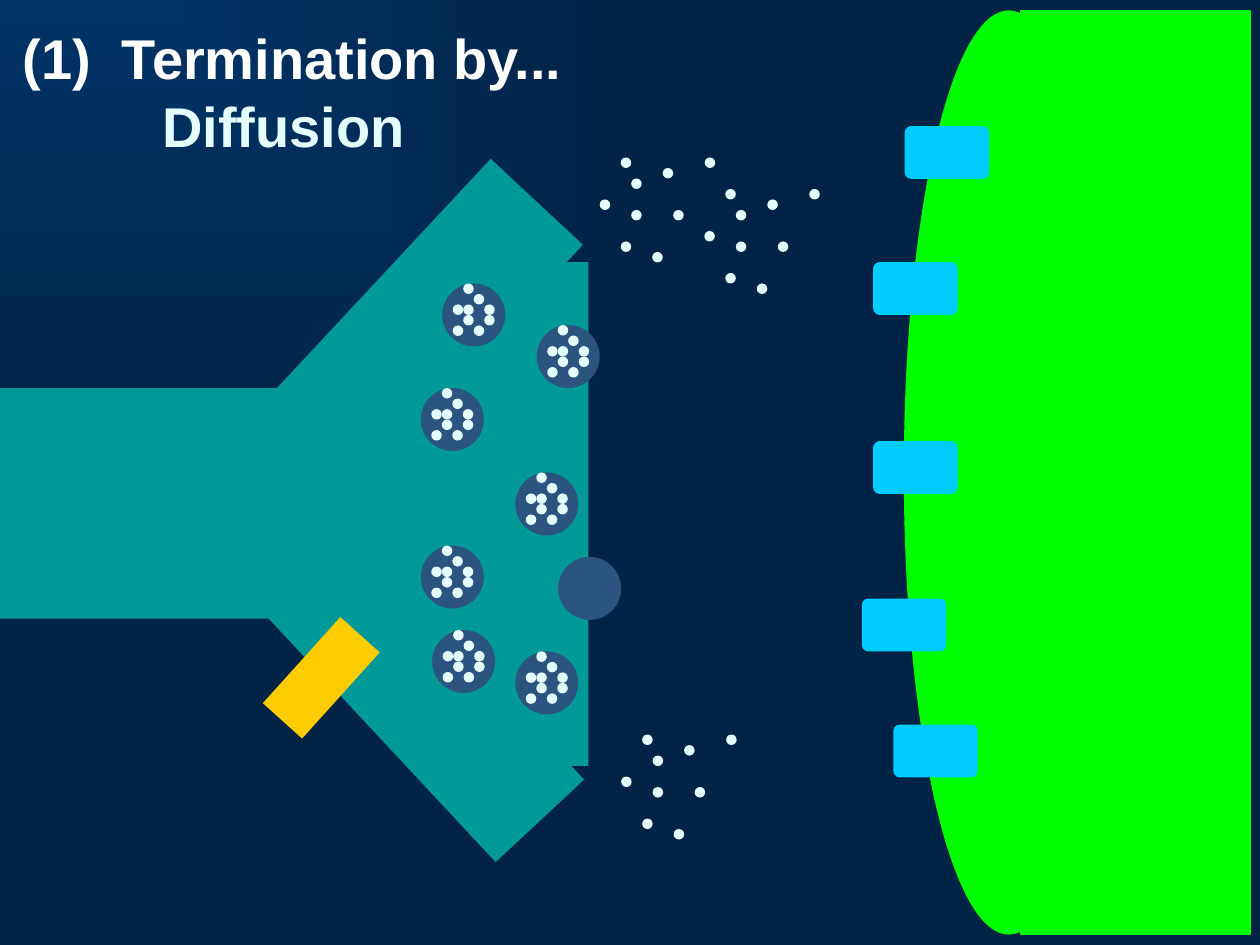
from lxml import etree
from pptx import Presentation
from pptx.dml.color import RGBColor
from pptx.enum.shapes import MSO_SHAPE
from pptx.oxml import parse_xml
from pptx.util import Inches, Pt

RECTANGLE = MSO_SHAPE.RECTANGLE
ROUNDED = MSO_SHAPE.ROUNDED_RECTANGLE
OVAL = MSO_SHAPE.OVAL

COLORS = {
    "background_start": "003366",
    "background_end": "002346",
    "terminal": "009999",
    "vesicle": "2B5481",
    "transmitter": "E5FFFF",
    "target_cell": "00FF00",
    "receptor": "00CCFF",
    "transporter": "FFCC00",
    "title": "FFFFFF",
}
TITLE_FONT = {"name": "Arial", "size": Pt(32), "bold": True}

# Dots sit on a grid whose step is the dot diameter
STEP = 1 / 12
VESICLE_SIZE = 0.5
VESICLE_DOTS = [(1, 2), (3, 4), (4, 2), (3, 1), (1, 4), (2, 2), (4, 3), (2, 0), (2, 3)]
CLOUD_DOTS = [(0, 4), (5, 9), (6, 1), (10, 0), (2, 8), (3, 2), (7, 5), (2, 0), (3, 5)]

FULL_VESICLES = [(3.34, 3.08), (3.34, 4.33), (4.09, 3.75), (4.26, 2.58),
                 (4.09, 5.17), (3.43, 5), (3.51, 2.25)]
EMPTY_VESICLE = (4.43, 4.42)
CLOUDS = [(5.59, 1.5), (4.76, 1.25), (4.93, 5.83)]
RECEPTORS = [(7.18, 1), (6.93, 2.08), (6.93, 3.5), (6.84, 4.75), (7.09, 5.75)]
TERMINAL_PARTS = [  # left, top, width, height, rotation
    (0, 3.08, 4.66, 1.83, 0),
    (1.62, 2.25, 3.14, 1, 313),
    (1.72, 4.92, 3.05, 0.96, 47),
    (3.32, 2.08, 1.35, 4, 0),
]


def set_background(slide):
    fill = slide.background.fill
    fill.gradient()
    for stop, name in zip(fill.gradient_stops, ("background_start", "background_end")):
        stop.color.rgb = RGBColor.from_string(COLORS[name])
    # Rectangular gradient spreading from the top left corner
    gradient = slide.background._cSld.bg.bgPr[0]
    gradient.remove(gradient[-1])
    gradient.append(parse_xml(
        '<a:path xmlns:a="http://schemas.openxmlformats.org/drawingml/2006/main" path="rect">'
        '<a:fillToRect r="100000" b="100000"/></a:path>'))
    etree.strip_attributes(gradient, "flip")


def add_shape(parent, kind, left, top, width, height, color, rotation=0, outlined=False):
    shape = parent.shapes.add_shape(
        kind, Inches(left), Inches(top), Inches(width), Inches(height))
    shape.shadow.inherit = False
    shape.rotation = rotation
    shape.fill.solid()
    shape.fill.fore_color.rgb = RGBColor.from_string(COLORS[color])
    if outlined:
        shape.line.color.rgb = RGBColor.from_string(COLORS[color])
        shape.line.width = Pt(1)
    else:
        shape.line.fill.background()
    return shape


def add_dots(group, left, top, cells):
    for column, row in cells:
        add_shape(group, OVAL, left + column * STEP, top + row * STEP,
                  STEP, STEP, "transmitter")


def add_vesicle(parent, left, top):
    add_shape(parent, OVAL, left, top, VESICLE_SIZE, VESICLE_SIZE, "vesicle")


def add_title_line(paragraph, text, color):
    run = paragraph.add_run()
    run.text = text
    for name, value in TITLE_FONT.items():
        setattr(run.font, name, value)
    run.font.color.rgb = RGBColor.from_string(COLORS[color])


def add_title(slide):
    box = slide.shapes.add_textbox(Inches(0.08), Inches(0.14), Inches(4.64), Inches(1.18))
    frame = box.text_frame
    frame.word_wrap = True
    add_title_line(frame.paragraphs[0], "(1)  Termination by...", "title")
    subtitle = frame.add_paragraph()
    subtitle._p.get_or_add_pPr().set("marL", str(Inches(1.11)))
    add_title_line(subtitle, "Diffusion", "transmitter")


def main():
    presentation = Presentation()
    presentation.slide_width = Inches(10)
    presentation.slide_height = Inches(7.5)
    slide = presentation.slides.add_slide(presentation.slide_layouts[6])
    set_background(slide)

    # Axon terminal
    terminal = slide.shapes.add_group_shape()
    for left, top, width, height, rotation in TERMINAL_PARTS:
        add_shape(terminal, RECTANGLE, left, top, width, height, "terminal", rotation)

    # Vesicles, filled and emptied
    for left, top in FULL_VESICLES:
        group = slide.shapes.add_group_shape()
        add_vesicle(group, left, top)
        add_dots(group, left, top, VESICLE_DOTS)
    add_vesicle(slide, *EMPTY_VESICLE)

    # Receiving cell with its receptors
    cell = slide.shapes.add_group_shape()
    add_shape(cell, OVAL, 7.18, 0.09, 1.65, 7.32, "target_cell", outlined=True)
    add_shape(cell, RECTANGLE, 8.1, 0.09, 1.82, 7.32, "target_cell", outlined=True)
    receptors = slide.shapes.add_group_shape()
    for left, top in RECEPTORS:
        receptor = add_shape(receptors, ROUNDED, left, top, 0.67, 0.42, "receptor")
        receptor.adjustments[0] = 0.125

    # Transporter on the terminal membrane
    add_shape(slide, RECTANGLE, 2.34, 4.92, 0.42, 0.92, "transporter", rotation=42)

    add_title(slide)

    # Transmitter diffusing away
    for left, top in CLOUDS:
        add_dots(slide.shapes.add_group_shape(), left, top, CLOUD_DOTS)

    presentation.save("out.pptx")


if __name__ == "__main__":
    main()
